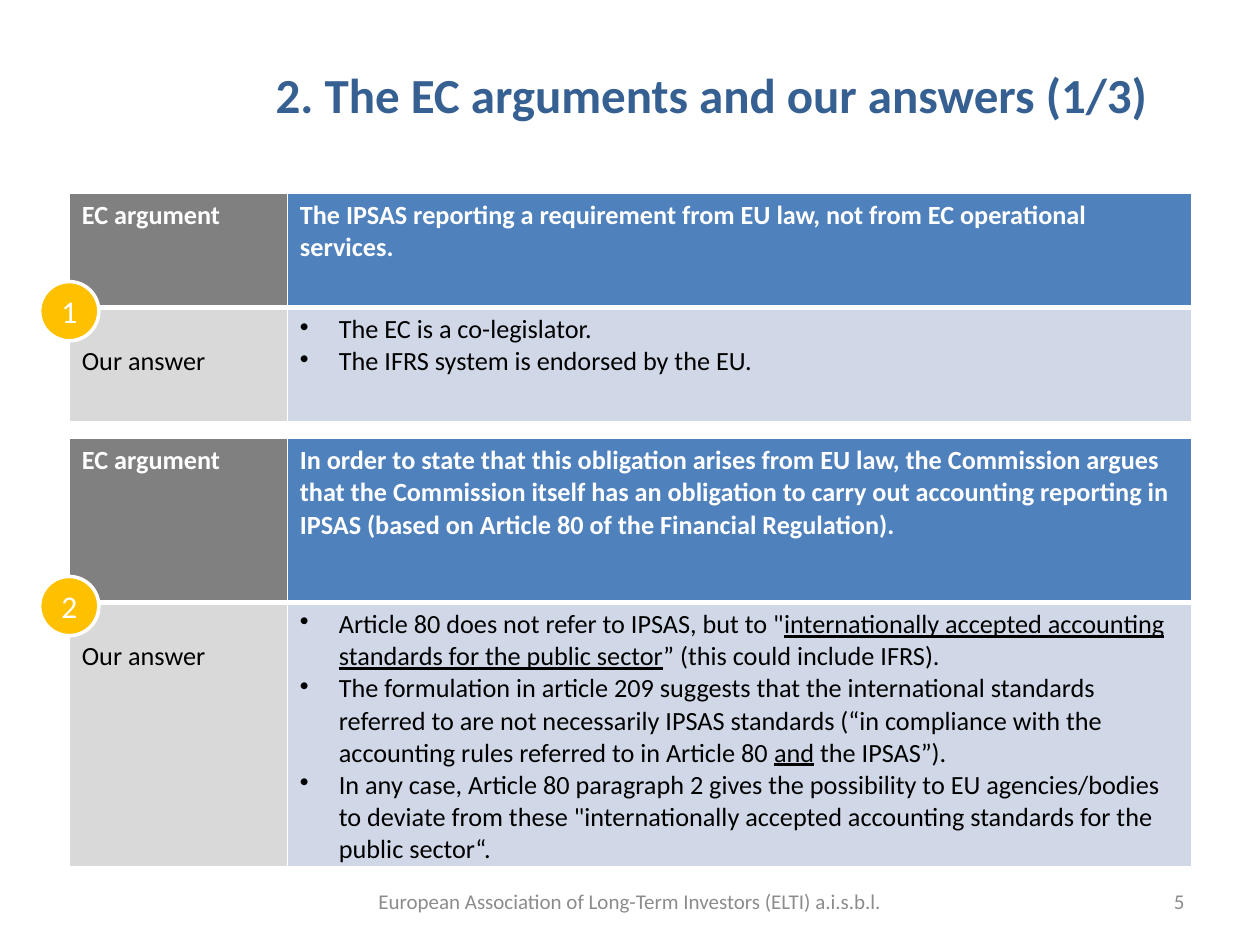
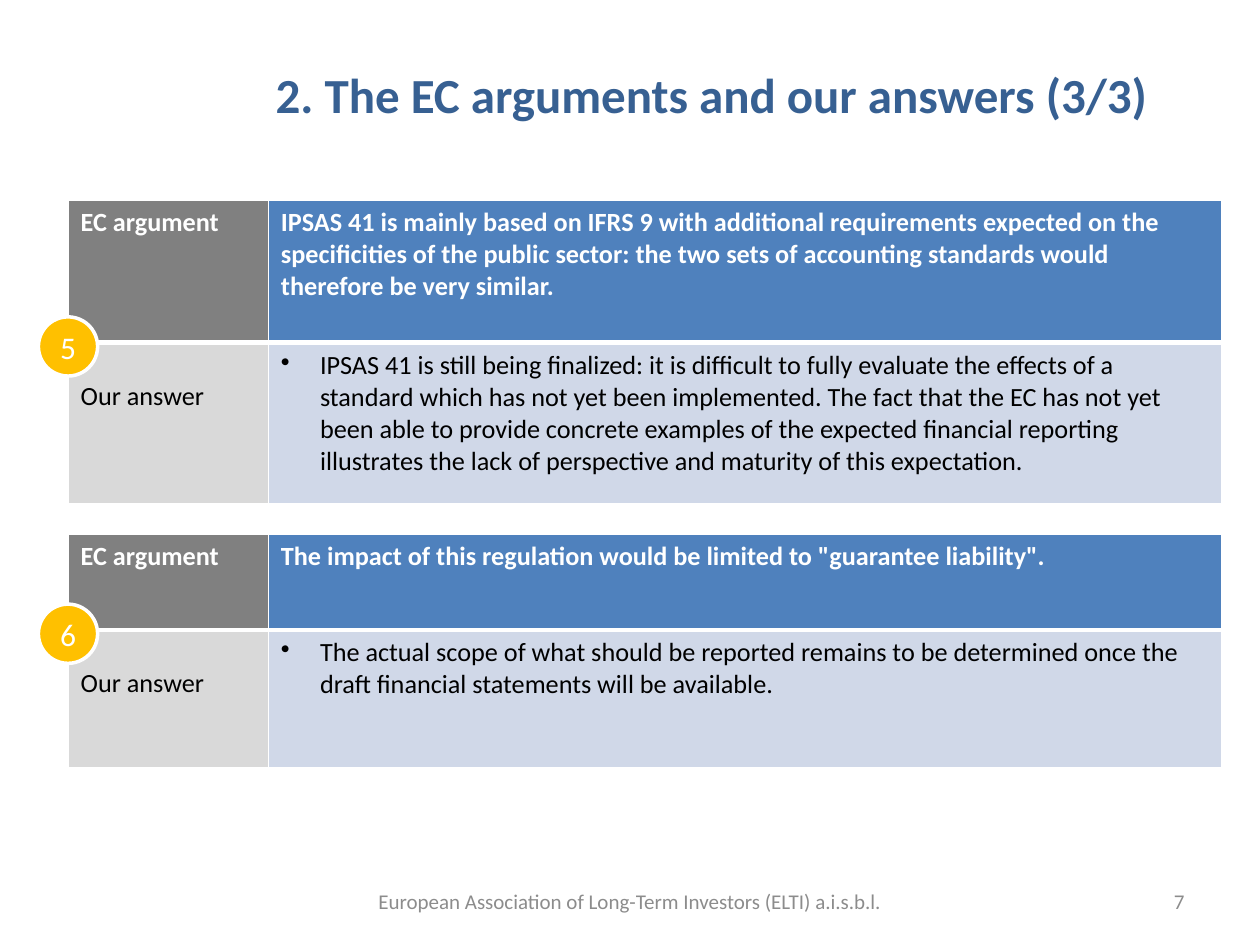
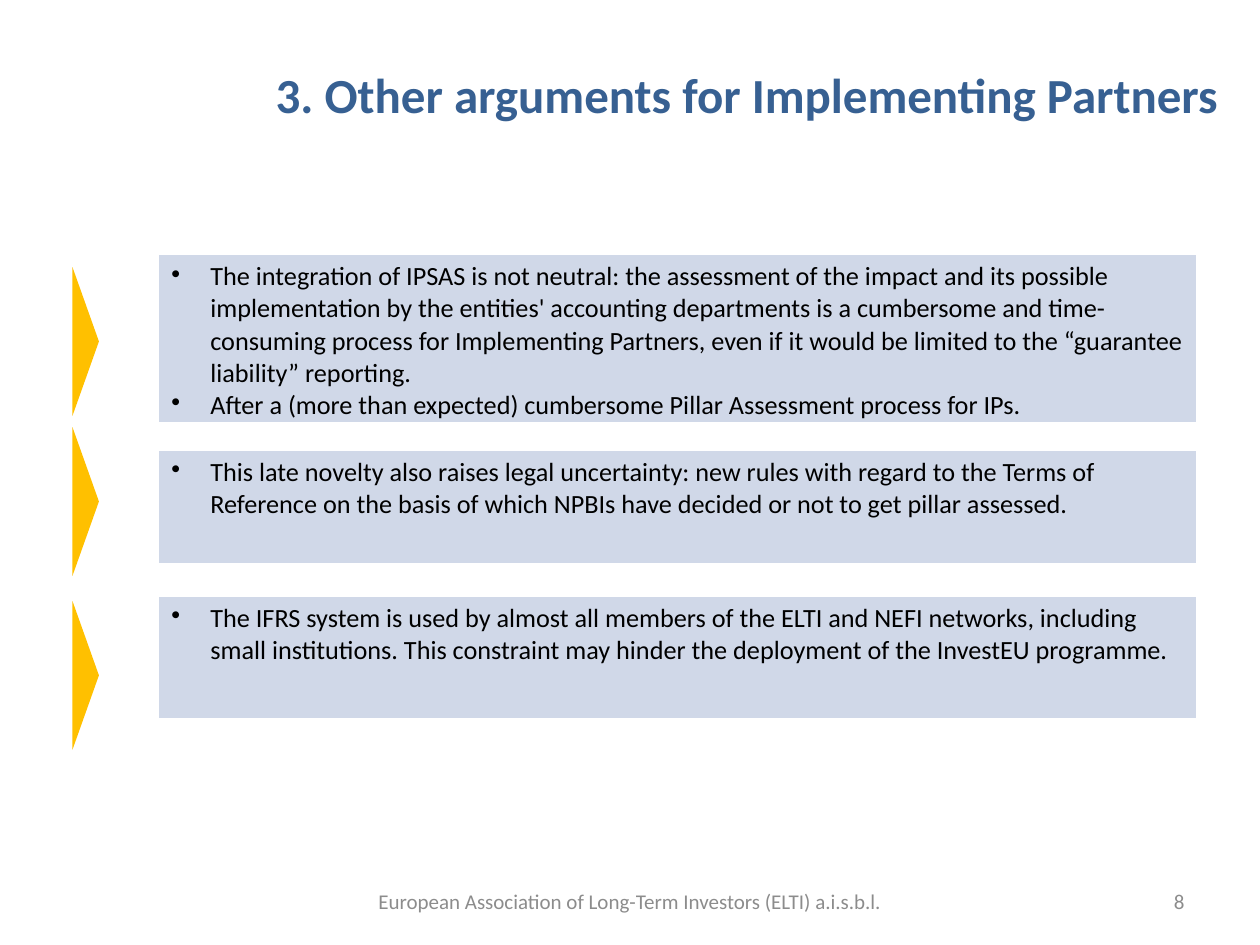
import pptx
import pptx.dml.color
import pptx.enum.shapes
import pptx.enum.text
import pptx.oxml.ns
import pptx.util
from lxml import etree

Inches = pptx.util.Inches
Pt = pptx.util.Pt
ALIGN = pptx.enum.text.PP_ALIGN
MIDDLE = pptx.enum.text.MSO_ANCHOR.MIDDLE
SHAPES = pptx.enum.shapes.MSO_SHAPE

FONT = "Calibri"
BODY_SIZE = 15
COLORS = {
    "title": "376092", "footer": "8C8C8C", "white": "FFFFFF", "black": "000000",
    "label_head": "808080", "argument": "4F81BD",
    "label_body": "D9D9D9", "answer": "D0D8E8", "accent": "FFC000",
}
TITLE_BOX = (2.09, 0.15, 7.8, 1.19)
FOOTER_BOX = (0, 6.95, 10, 0.4)
NUMBER_BOX = (7.17, 6.95, 2.33, 0.4)
BADGE_SIZE = 0.47
BADGE_DROP = 0.03
ARROW_LENGTH, ARROW_DEPTH = 1.18, 0.21
ARROW_CENTER = 0.68
LINE_HEIGHT = 0.25
BULLET_INDENT = 0.31


def rgb(name):
    return pptx.dml.color.RGBColor.from_string(COLORS[name])


def add_bullet(paragraph):
    properties = paragraph._p.get_or_add_pPr()
    properties.set("marL", str(Inches(BULLET_INDENT)))
    properties.set("indent", str(-Inches(BULLET_INDENT)))
    bullet = etree.SubElement(properties, pptx.oxml.ns.qn("a:buChar"))
    bullet.set("char", "•")


def write(frame, *lines, size=BODY_SIZE, color="black", bold=False,
          align=ALIGN.LEFT, bullets=False):
    """Write one paragraph per line; words between underscores are underlined."""
    frame.word_wrap = True
    for index, line in enumerate(lines):
        paragraph = frame.add_paragraph() if index else frame.paragraphs[0]
        paragraph.alignment = align
        if bullets:
            add_bullet(paragraph)
        for position, part in enumerate(line.split("_")):
            run = paragraph.add_run()
            run.text = part
            run.font.name = FONT
            run.font.size = Pt(size)
            run.font.bold = bold
            run.font.color.rgb = rgb(color)
            if position % 2:
                run.font.underline = True


def add_text(slide, box, text, **text_format):
    frame = slide.shapes.add_textbox(*map(Inches, box)).text_frame
    frame.vertical_anchor = MIDDLE
    write(frame, text, **text_format)


def add_accent_shape(slide, kind, box):
    shape = slide.shapes.add_shape(kind, *map(Inches, box))
    shape.shadow.inherit = False
    shape.fill.solid()
    shape.fill.fore_color.rgb = rgb("accent")
    shape.line.fill.background()
    return shape


def style_cell(cell, fill, top=1, bottom=1):
    """Give the cell white borders (widths in points) and a solid fill."""
    properties = cell._tc.get_or_add_tcPr()
    for side, width in (("L", 1), ("R", 1), ("T", top), ("B", bottom)):
        border = etree.SubElement(properties, pptx.oxml.ns.qn(f"a:ln{side}"))
        border.set("w", str(Pt(width)))
        solid = etree.SubElement(border, pptx.oxml.ns.qn("a:solidFill"))
        etree.SubElement(solid, pptx.oxml.ns.qn("a:srgbClr")).set("val", COLORS["white"])
    cell.fill.solid()
    cell.fill.fore_color.rgb = rgb(fill)


def add_plain_table(slide, left, top, widths, heights):
    box = (left, top, sum(widths), sum(heights))
    table = slide.shapes.add_table(len(heights), len(widths), *map(Inches, box)).table
    table.first_row = table.horz_banding = False
    for column, width in zip(table.columns, widths):
        column.width = Inches(width)
    for row, height in zip(table.rows, heights):
        row.height = Inches(height)
    return table


def add_badge(slide, center_x, center_y, number):
    half = BADGE_SIZE / 2
    badge = add_accent_shape(slide, SHAPES.OVAL,
                             (center_x - half, center_y - half, BADGE_SIZE, BADGE_SIZE))
    badge.line.color.rgb = rgb("white")
    badge.line.width = Pt(2)
    badge.text_frame.vertical_anchor = MIDDLE
    write(badge.text_frame, str(number), size=18, color="white", align=ALIGN.CENTER)


def add_debate(slide, left, top, widths, heights, number, argument, answers):
    """Add an argument with its answers and a badge where the two rows meet."""
    table = add_plain_table(slide, left, top, widths, heights)
    for column, (head, body) in enumerate((("label_head", "label_body"),
                                           ("argument", "answer"))):
        style_cell(table.cell(0, column), head, bottom=3)
        style_cell(table.cell(1, column), body, top=3)
    for column, text in enumerate(("EC argument", argument)):
        write(table.cell(0, column).text_frame, text, color="white", bold=True)
    answer_label = table.cell(1, 0)
    answer_label.margin_top = Inches(0.05 + LINE_HEIGHT)
    write(answer_label.text_frame, "Our answer")
    write(table.cell(1, 1).text_frame, *answers, bullets=True)
    add_badge(slide, left, top + heights[0] + BADGE_DROP, number)


def add_point(slide, left, top, width, height, arrow_y, points):
    """Add a one-cell panel of points, with an arrow centred on arrow_y."""
    panel = add_plain_table(slide, left, top, [width], [height]).cell(0, 0)
    style_cell(panel, "answer", bottom=3)
    write(panel.text_frame, *points, bullets=True)
    arrow = add_accent_shape(slide, SHAPES.ISOSCELES_TRIANGLE,
                             (ARROW_CENTER - ARROW_LENGTH / 2, arrow_y - ARROW_DEPTH / 2,
                              ARROW_LENGTH, ARROW_DEPTH))
    arrow.rotation = 90


def add_slide(deck, title, number):
    slide = deck.slides.add_slide(deck.slide_layouts[6])
    add_text(slide, TITLE_BOX, title, size=28, color="title", bold=True)
    add_text(slide, FOOTER_BOX,
             "European Association of Long-Term Investors (ELTI) a.i.s.b.l.",
             size=12, color="footer", align=ALIGN.CENTER)
    add_text(slide, NUMBER_BOX, str(number), size=12, color="footer", align=ALIGN.RIGHT)
    return slide


def build_first_arguments(deck):
    slide = add_slide(deck, "2. The EC arguments and our answers (1/3)", 5)
    widths = (1.73, 7.18)
    add_debate(
        slide, 0.55, 1.53, widths, (0.91, 0.91), 1,
        "The IPSAS reporting a requirement from EU law, not from EC operational services.",
        ["The EC is a co-legislator.", "The IFRS system is endorsed by the EU."])
    add_debate(
        slide, 0.55, 3.48, widths, (1.3, 2.1), 2,
        "In order to state that this obligation arises from EU law, the Commission argues "
        "that the Commission itself has an obligation to carry out accounting reporting in "
        "IPSAS (based on Article 80 of the Financial Regulation).",
        ['Article 80 does not refer to IPSAS, but to "_internationally accepted accounting '
         'standards for the public sector_” (this could include IFRS).',
         "The formulation in article 209 suggests that the international standards referred "
         "to are not necessarily IPSAS standards (“in compliance with the accounting rules "
         "referred to in Article 80 _and_ the IPSAS”).",
         "In any case, Article 80 paragraph 2 gives the possibility to EU agencies/bodies to "
         'deviate from these "internationally accepted accounting standards for the public '
         'sector“.'])


def build_last_arguments(deck):
    slide = add_slide(deck, "2. The EC arguments and our answers (3/3)", 7)
    widths = (1.59, 7.57)
    add_debate(
        slide, 0.54, 1.59, widths, (1.13, 1.28), 5,
        "IPSAS 41 is mainly based on IFRS 9 with additional requirements expected on the "
        "specificities of the public sector: the two sets of accounting standards would "
        "therefore be very similar.",
        ["IPSAS 41 is still being finalized: it is difficult to fully evaluate the effects "
         "of a standard which has not yet been implemented. The fact that the EC has not yet "
         "been able to provide concrete examples of the expected financial reporting "
         "illustrates the lack of perspective and maturity of this expectation."])
    add_debate(
        slide, 0.54, 4.24, widths, (0.76, 1.09), 6,
        'The impact of this regulation would be limited to "guarantee liability".',
        ["The actual scope of what should be reported remains to be determined once the "
         "draft financial statements will be available."])


def build_other_arguments(deck):
    slide = add_slide(deck, "3. Other arguments for Implementing Partners", 8)
    panels = (
        (2.02, 1.35, 2.71,
         ["The integration of IPSAS is not neutral: the assessment of the impact and its "
          "possible implementation by the entities' accounting departments is a cumbersome "
          "and time-consuming process for Implementing Partners, even if it would be limited "
          "to the “guarantee liability” reporting.",
          "After a (more than expected) cumbersome Pillar Assessment process for IPs."]),
        (3.57, 0.92, 3.98,
         ["This late novelty also raises legal uncertainty: new rules with regard to the "
          "Terms of Reference on the basis of which NPBIs have decided or not to get pillar "
          "assessed."]),
        (4.73, 0.99, 5.36,
         ["The IFRS system is used by almost all members of the ELTI and NEFI networks, "
          "including small institutions. This constraint may hinder the deployment of the "
          "InvestEU programme."]),
    )
    for top, height, arrow_y, points in panels:
        add_point(slide, 1.26, top, 8.24, height, arrow_y, points)


def main():
    deck = pptx.Presentation()
    deck.slide_width, deck.slide_height = Inches(10), Inches(7.5)
    build_first_arguments(deck)
    build_last_arguments(deck)
    build_other_arguments(deck)
    deck.save("out.pptx")


if __name__ == "__main__":
    main()
